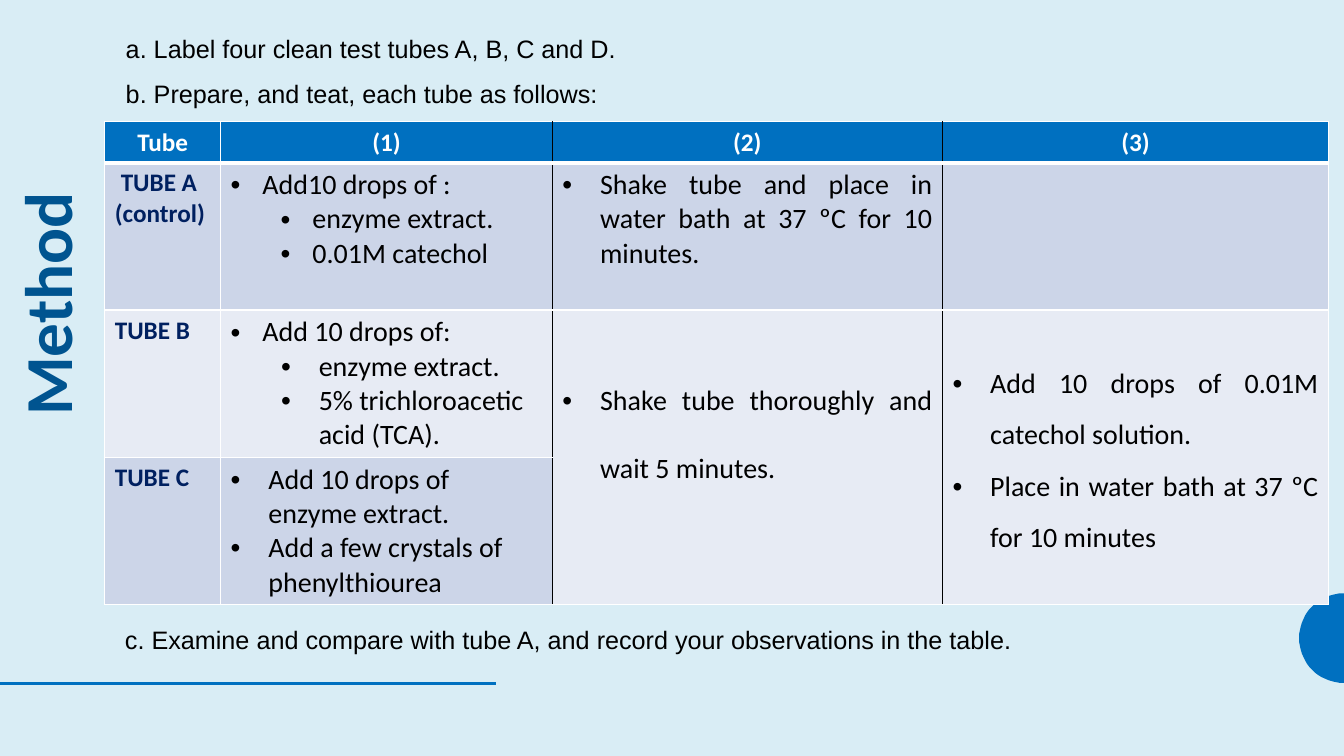
"""Build the enzyme method slide with its table of tube treatments."""
import math
from dataclasses import dataclass

import lxml.etree
import pptx
import pptx.dml.color
import pptx.enum.shapes
import pptx.enum.text
import pptx.oxml.ns
import pptx.util

Cm = pptx.util.Cm
Pt = pptx.util.Pt
RGBColor = pptx.dml.color.RGBColor
Align = pptx.enum.text.PP_ALIGN
qn = pptx.oxml.ns.qn

SKY = RGBColor(0xD9, 0xED, 0xF5)
BLUE = RGBColor(0x00, 0x70, 0xC0)
DEEP = RGBColor(0x00, 0x54, 0x90)
NAVY = RGBColor(0x00, 0x20, 0x60)
DARK = RGBColor(0xCC, 0xD5, 0xE8)
PALE = RGBColor(0xE7, 0xEB, 0xF4)
WHITE = RGBColor(0xFF, 0xFF, 0xFF)
BLACK = RGBColor(0x00, 0x00, 0x00)

WIDE, HIGH = 33.87, 19.05
COLS = (2.92, 8.36, 9.83, 9.73)
ROWS = (1.02, 3.71, 3.71, 3.71)


@dataclass(frozen=True)
class Line:
    text: str
    left: float = 0
    hang: float = 0
    align: Align = Align.LEFT
    space: float = 1
    level: int = 0


@dataclass(frozen=True)
class Style:
    size: int
    color: RGBColor
    bold: bool = False
    face: str = "Calibri"


@dataclass(frozen=True)
class Entry:
    row: int
    col: int
    lines: tuple[Line, ...]
    style: Style
    top: float = 0.13


@dataclass(frozen=True)
class Note:
    top: float
    left: float
    width: float
    height: float
    lines: tuple[Line, ...]


HEAD = Style(18, WHITE, True)
LABEL = Style(18, NAVY, True)
BODY = Style(20, BLACK)
PLAIN = Style(18, BLACK, face="Arial")
TITLE = Style(48, DEEP, True)
FULL = Align.JUSTIFY

ENTRIES = [
    Entry(0, col, (Line(text, align=Align.CENTER),), HEAD)
    for col, text in enumerate(("Tube", "(1)", "(2)", "(3)"))
] + [
    Entry(1, 0, (Line("TUBE A", 0.15), Line("(control)")), LABEL),
    Entry(2, 0, (Line("TUBE B"),), LABEL),
    Entry(3, 0, (Line("TUBE C"),), LABEL),
    Entry(1, 1, (
        Line("Add10 drops of :", 0.8, 0.8, FULL),
        Line("enzyme extract.", 2.06, 0.8, FULL, level=1),
        Line("0.01M catechol", 2.06, 0.8, FULL, level=1)), BODY),
    Entry(2, 1, (
        Line("Add 10 drops of:", 0.8, 0.8, FULL),
        Line("enzyme extract.", 2.22, 0.95, level=1),
        Line("5% trichloroacetic acid (TCA).", 2.22, 0.95, level=1)), BODY),
    Entry(3, 1, (
        Line("Add 10 drops of enzyme extract.", 0.95, 0.95),
        Line("Add a few crystals of phenylthiourea", 0.95, 0.95)), BODY),
    Entry(1, 2, (
        Line("Shake tube and place in water bath at 37 ºC for 10 minutes.",
             0.95, 0.95, FULL),), BODY),
    Entry(2, 2, (
        Line("Shake tube thoroughly and wait 5 minutes.",
             0.95, 0.95, FULL, 2),), BODY, 0.99),
    Entry(2, 3, (
        Line("Add 10 drops of 0.01M catechol solution.",
             0.95, 0.95, FULL, 1.5),
        Line("Place in water bath at 37 ºC for 10 minutes",
             0.95, 0.95, FULL, 1.5)), BODY, 0.99),
]

NOTES = (
    Note(0.33, 1.65, 22.43, 2.2, (
        Line("a. Label four clean test tubes A, B, C and D.", 0, -1.27, space=1.5),
        Line("b. Prepare, and teat, each tube as follows:", 0, -1.27, space=1.5))),
    Note(15.6, 2.9, 24.89, 1.02, (
        Line("c. Examine and compare with tube A, and record your "
             "observations in the table."),)),
)


def write(frame, lines: tuple[Line, ...], style: Style) -> None:
    frame.text = "\n".join(line.text for line in lines)
    for para, line in zip(frame.paragraphs, lines):
        props = para._p.get_or_add_pPr()
        props.set("marL", str(Cm(line.left)))
        props.set("indent", str(Cm(-line.hang)))
        if line.hang > 0:
            font = lxml.etree.SubElement(props, qn("a:buFont"))
            font.set("typeface", "Arial")
            lxml.etree.SubElement(props, qn("a:buChar")).set("char", "•")
        para.level = line.level
        para.alignment = line.align
        para.line_spacing = float(line.space)
        for run in para.runs:
            run.font.name = style.face
            run.font.size = Pt(style.size)
            run.font.bold = style.bold
            run.font.color.rgb = style.color


def edge(cell, side: str, color: RGBColor, width: float) -> None:
    line = lxml.etree.SubElement(cell._tc.get_or_add_tcPr(), qn(f"a:ln{side}"))
    line.set("w", str(Pt(width)))
    fill = lxml.etree.SubElement(line, qn("a:solidFill"))
    lxml.etree.SubElement(fill, qn("a:srgbClr")).set("val", str(color))


def tint(row: int, col: int) -> RGBColor:
    if row == 0:
        return BLUE
    return PALE if row == 2 or (row == 3 and col > 1) else DARK


def add_decor(slide) -> None:
    arc = [(100 * (WIDE - 1.13 * math.cos(turn)), 100 * (16.08 + 1.13 * math.sin(turn)))
           for turn in (math.radians(deg) for deg in range(-90, 91, 5))]
    path = slide.shapes.build_freeform(*arc[0], scale=Cm(0.01))
    path.add_line_segments(arc[1:], close=True)
    disc = path.convert_to_shape()
    disc.shadow.inherit = False
    disc.fill.solid()
    disc.fill.fore_color.rgb = BLUE
    disc.line.fill.background()
    rule = slide.shapes.add_connector(
        pptx.enum.shapes.MSO_CONNECTOR.STRAIGHT, 0, Cm(17.22), Cm(12.5), Cm(17.22))
    rule.line.color.rgb = BLUE
    rule.line.width = Pt(2)
    lxml.etree.SubElement(rule._element.spPr, qn("a:effectLst"))


def add_grid(slide) -> None:
    grid = slide.shapes.add_table(len(ROWS), len(COLS), Cm(2.64), Cm(3.07),
                                  Cm(sum(COLS)), Cm(sum(ROWS))).table
    grid.horz_banding = False
    for col, width in enumerate(COLS):
        grid.columns[col].width = Cm(width)
    for row, height in enumerate(ROWS):
        grid.rows[row].height = Cm(height)
        for col in range(len(COLS)):
            cell = grid.cell(row, col)
            edge(cell, "L", BLACK if col > 1 else WHITE, 1)
            edge(cell, "R", BLACK if col in (1, 2) else WHITE, 1)
            edge(cell, "T", WHITE, 3 if row == 1 else 1)
            edge(cell, "B", WHITE, 3 if row == 0 else 1)
            cell.fill.solid()
            cell.fill.fore_color.rgb = tint(row, col)
    for col in (2, 3):
        grid.cell(2, col).merge(grid.cell(3, col))
    for entry in ENTRIES:
        cell = grid.cell(entry.row, entry.col)
        cell.margin_top = Cm(entry.top)
        write(cell.text_frame, entry.lines, entry.style)


def add_note(slide, note: Note) -> None:
    box = slide.shapes.add_textbox(
        Cm(note.left), Cm(note.top), Cm(note.width), Cm(note.height))
    box.text_frame.word_wrap = True
    write(box.text_frame, note.lines, PLAIN)


def set_title(slide) -> None:
    title = slide.shapes.title
    title.left, title.top = Cm(-2.16), Cm(5.49)
    title.width, title.height = Cm(7.42), Cm(3.07)
    title.rotation = 270
    frame = title.text_frame
    write(frame, (Line("Method"),), TITLE)
    frame.vertical_anchor = pptx.enum.text.MSO_ANCHOR.TOP
    frame.auto_size = pptx.enum.text.MSO_AUTO_SIZE.NONE


def main() -> None:
    deck = pptx.Presentation()
    deck.slide_width, deck.slide_height = Cm(WIDE), Cm(HIGH)
    slide = deck.slides.add_slide(deck.slide_layouts[5])
    slide.background.fill.solid()
    slide.background.fill.fore_color.rgb = SKY
    set_title(slide)
    add_decor(slide)
    add_grid(slide)
    for note in NOTES:
        add_note(slide, note)
    deck.save("out.pptx")


if __name__ == "__main__":
    main()
